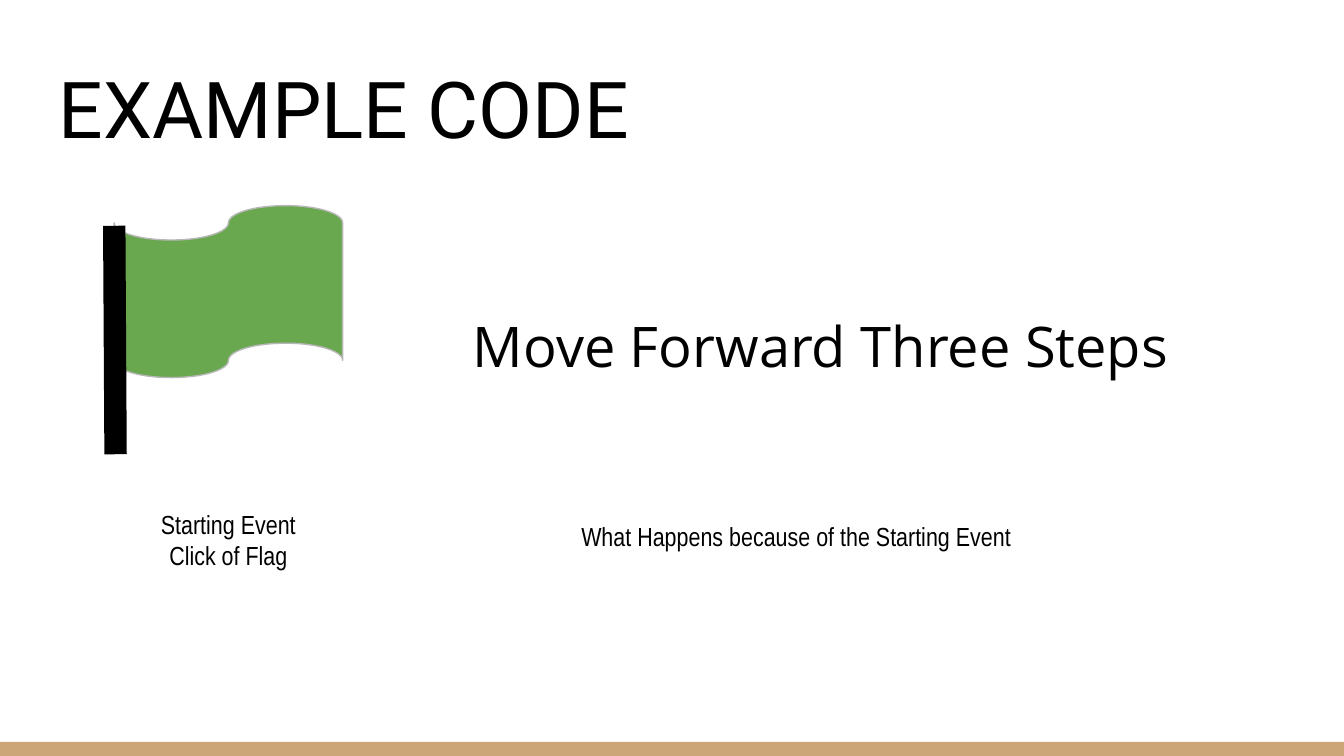
from lxml import etree
from pptx import Presentation
from pptx import util as u
from pptx.dml.color import RGBColor
from pptx.enum import shapes, text
from pptx.oxml.ns import qn


def color(hex_string):
    return RGBColor.from_string(hex_string)


def add_text(lines, left, top, width, height, size, font="Arial Narrow",
             align=text.PP_ALIGN.LEFT, anchor=text.MSO_ANCHOR.TOP):
    """Add a wrapped text box with one paragraph for each line."""
    box = slide.shapes.add_textbox(
        u.Inches(left), u.Inches(top), u.Inches(width), u.Inches(height))
    frame = box.text_frame
    frame.word_wrap = True
    frame.vertical_anchor = anchor
    frame.margin_left = frame.margin_right = u.Inches(0.1)
    frame.margin_top = frame.margin_bottom = u.Inches(0.1)
    frame.text = "\n".join(lines)
    for paragraph in frame.paragraphs:
        paragraph.alignment = align
        for run in paragraph.runs:
            run.font.size = u.Pt(size)
            run.font.name = font
            run.font.color.rgb = color("000000")


deck = Presentation()
deck.slide_width = u.Inches(10)
deck.slide_height = u.Inches(10 * 9 / 16)
slide = deck.slides.add_slide(deck.slide_layouts[6])
slide.background.fill.solid()
slide.background.fill.fore_color.rgb = color("FFFFFF")

footer_band = slide.shapes.add_shape(
    shapes.MSO_SHAPE.RECTANGLE,
    u.Inches(0), u.Inches(5.52), u.Inches(10), u.Inches(0.11))
footer_band.shadow.inherit = False
footer_band.fill.solid()
footer_band.fill.fore_color.rgb = color("CCA677")
footer_band.line.fill.background()

add_text(["EXAMPLE CODE"], 0.34, 0.35, 9.32, 0.9, size=42, font="Roboto",
         anchor=text.MSO_ANCHOR.BOTTOM)
add_text(["What Happens because of the Starting Event"],
         3.28, 3.77, 5.29, 0.38, size=14, align=text.PP_ALIGN.CENTER)

flag = slide.shapes.add_shape(
    shapes.MSO_SHAPE.FLOWCHART_PUNCHED_TAPE,
    u.Inches(0.85), u.Inches(1.53), u.Inches(1.7), u.Inches(1.28))
flag.shadow.inherit = False
flag.fill.solid()
flag.fill.fore_color.rgb = color("6AA84F")
flag.line.color.rgb = color("B7B7B7")
flag.line.width = u.Pt(0.75)

flagpole = slide.shapes.add_connector(
    shapes.MSO_CONNECTOR.STRAIGHT,
    u.Inches(0.85), u.Inches(1.68), u.Inches(0.86), u.Inches(3.38))
flagpole.line.color.rgb = color("000000")
flagpole.line.width = u.Pt(12)
etree.SubElement(flagpole._element.spPr, qn("a:effectLst"))

add_text(["Starting Event", "Click of Flag"],
         0.75, 3.68, 1.9, 0.55, size=14, align=text.PP_ALIGN.CENTER)
add_text(["Move Forward Three Steps"],
         3.42, 2.22, 5.42, 0.62, size=30, font="Open Sans")

deck.save("out.pptx")
